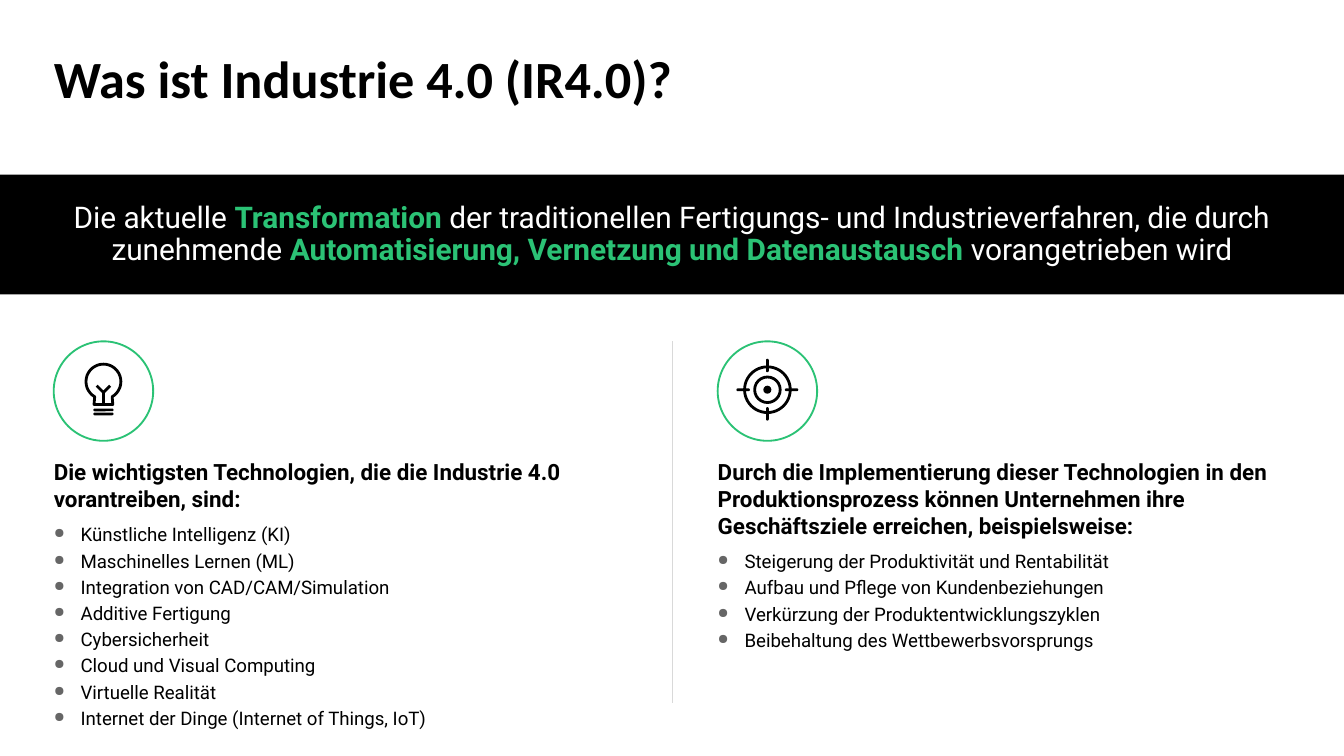
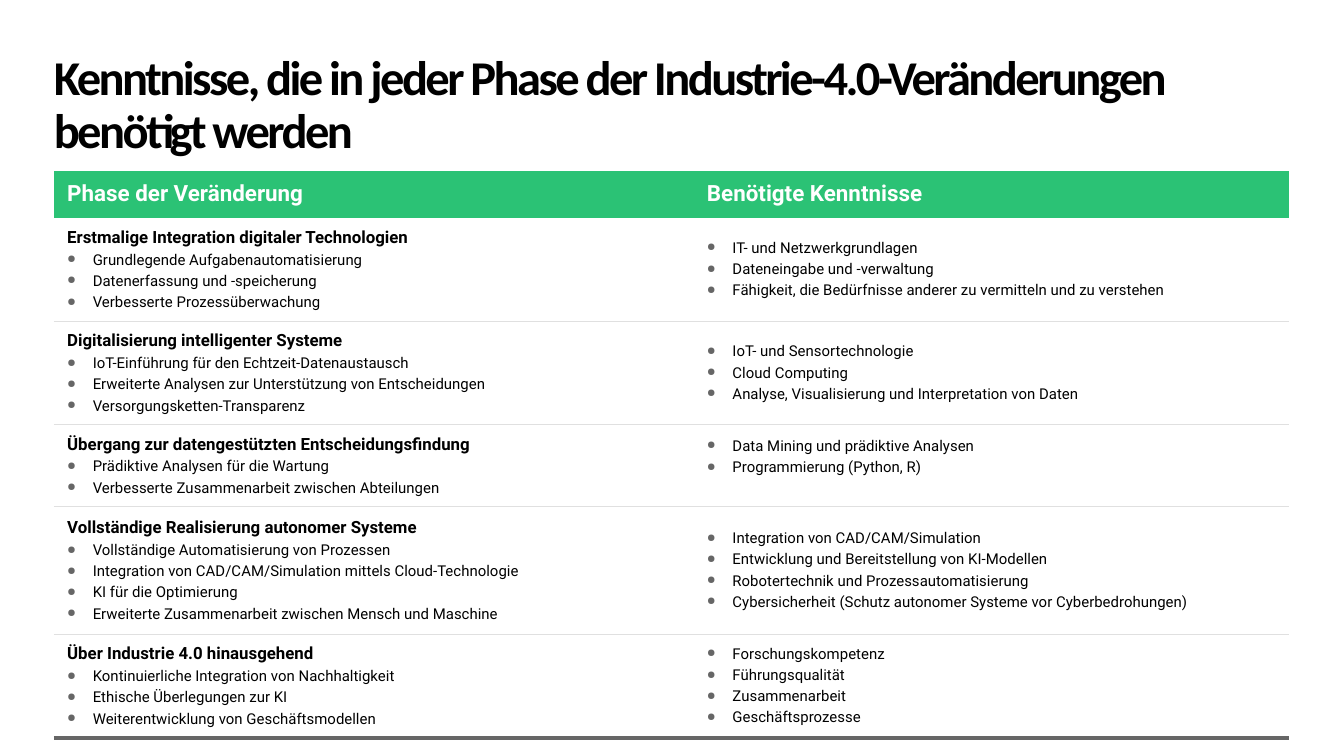
from math import cos, radians, sin

from lxml.etree import SubElement
from pptx import Presentation
from pptx.dml.color import RGBColor
from pptx.enum.shapes import MSO_CONNECTOR, MSO_SHAPE
from pptx.enum.text import MSO_ANCHOR, PP_ALIGN
from pptx.oxml import parse_xml
from pptx.oxml.ns import nsdecls, qn
from pptx.util import Inches, Pt

# Shared look
GREEN, BLACK, WHITE = "2BC275", "000000", "FFFFFF"
GRAY, RULE, PALE = "666666", "D9D9D9", "E0E0E0"
HEAD, BODY = "Calibri", "Roboto"
LEFT, WIDE = 0.4, 9.19
STROKE = 1.5

# Slide 1 wording: banner runs as (text, is key word)
BANNER = [
    ("Die aktuelle ", False),
    ("Transformation", True),
    (" der traditionellen Fertigungs- und Industrieverfahren, die durch zunehmende ", False),
    ("Automatisierung, Vernetzung und Datenaustausch", True),
    (" vorangetrieben wird", False),
]
TECH = ("Die wichtigsten Technologien, die die Industrie 4.0 vorantreiben, sind:", [
    "Künstliche Intelligenz (KI)",
    "Maschinelles Lernen (ML)",
    "Integration von CAD/CAM/Simulation",
    "Additive Fertigung",
    "Cybersicherheit",
    "Cloud und Visual Computing",
    "Virtuelle Realität",
    "Internet der Dinge (Internet of Things, IoT)",
])
GOALS = ("Durch die Implementierung dieser Technologien in den Produktionsprozess "
         "können Unternehmen ihre Geschäftsziele erreichen, beispielsweise:", [
             "Steigerung der Produktivität und Rentabilität",
             "Aufbau und Pflege von Kundenbeziehungen",
             "Verkürzung der Produktentwicklungszyklen",
             "Beibehaltung des Wettbewerbsvorsprungs",
         ])

# Slide 2 wording: height, phase, steps, skills
PHASES = [
    (0.77, "Erstmalige Integration digitaler Technologien",
     ["Grundlegende Aufgabenautomatisierung",
      "Datenerfassung und -speicherung",
      "Verbesserte Prozessüberwachung"],
     ["IT- und Netzwerkgrundlagen",
      "Dateneingabe und -verwaltung",
      "Fähigkeit, die Bedürfnisse anderer zu vermitteln und zu verstehen"]),
    (0.77, "Digitalisierung intelligenter Systeme",
     ["IoT-Einführung für den Echtzeit-Datenaustausch",
      "Erweiterte Analysen zur Unterstützung von Entscheidungen",
      "Versorgungsketten-Transparenz"],
     ["IoT- und Sensortechnologie",
      "Cloud Computing",
      "Analyse, Visualisierung und Interpretation von Daten"]),
    (0.61, "Übergang zur datengestützten Entscheidungsfindung",
     ["Prädiktive Analysen für die Wartung",
      "Verbesserte Zusammenarbeit zwischen Abteilungen"],
     ["Data Mining und prädiktive Analysen",
      "Programmierung (Python, R)"]),
    (0.95, "Vollständige Realisierung autonomer Systeme",
     ["Vollständige Automatisierung von Prozessen",
      "Integration von CAD/CAM/Simulation mittels Cloud-Technologie",
      "KI für die Optimierung",
      "Erweiterte Zusammenarbeit zwischen Mensch und Maschine"],
     ["Integration von CAD/CAM/Simulation",
      "Entwicklung und Bereitstellung von KI-Modellen",
      "Robotertechnik und Prozessautomatisierung",
      "Cybersicherheit (Schutz autonomer Systeme vor Cyberbedrohungen)"]),
    (0.77, "Über Industrie 4.0 hinausgehend",
     ["Kontinuierliche Integration von Nachhaltigkeit",
      "Ethische Überlegungen zur KI",
      "Weiterentwicklung von Geschäftsmodellen"],
     ["Forschungskompetenz",
      "Führungsqualität",
      "Zusammenarbeit",
      "Geschäftsprozesse"]),
]


def color(code):
    return RGBColor.from_string(code)


# Text
def add_run(para, text, size, code=BLACK, bold=False, face=BODY):
    run = para.add_run()
    run.text = text
    font = run.font
    font.name, font.size, font.bold = face, Pt(size), bold
    font.color.rgb = color(code)
    return run


def set_frame(frame, side=0, edge=0, anchor=MSO_ANCHOR.TOP):
    frame.word_wrap = True
    frame.margin_left = frame.margin_right = Inches(side)
    frame.margin_top = frame.margin_bottom = Inches(edge)
    frame.vertical_anchor = anchor
    return frame


def add_box(slide, x, y, w, h):
    box = slide.shapes.add_textbox(Inches(x), Inches(y), Inches(w), Inches(h))
    return set_frame(box.text_frame)


def add_title(slide, text, size, high, track=0):
    para = add_box(slide, LEFT, 0.4, WIDE, high).paragraphs[0]
    para.line_spacing = 0.9
    run = add_run(para, text, size, bold=True, face=HEAD)
    if track:
        run._r.get_or_add_rPr().set("spc", str(track))


def add_bullet(para, indent):
    props = para._p.get_or_add_pPr()
    props.set("marL", str(Inches(indent)))
    props.set("indent", str(-Inches(indent)))
    tint = SubElement(props, qn("a:buClr"))
    SubElement(tint, qn("a:srgbClr")).set("val", GRAY)
    SubElement(props, qn("a:buSzPct")).set("val", "75000")
    SubElement(props, qn("a:buChar")).set("char", "●")


def fill_list(frame, head, items, sizes, indent, before=0, after=0, gap=0):
    """Write an optional bold heading, then one bullet per item."""
    lines = ([(head, True)] if head else []) + [(item, False) for item in items]
    for num, (text, bold) in enumerate(lines):
        para = frame.add_paragraph() if num else frame.paragraphs[0]
        if not bold:
            add_bullet(para, indent)
        if num and before:
            para.space_before = Pt(before)
        if after:
            para.space_after = Pt(gap if bold else after)
        add_run(para, text, sizes[0] if bold else sizes[1], bold=bold)


# Shapes
def paint(shape, fill=None, line=None, width=1):
    shape.shadow.inherit = False
    if fill:
        shape.fill.solid()
        shape.fill.fore_color.rgb = color(fill)
    else:
        shape.fill.background()
    if line:
        shape.line.color.rgb = color(line)
        shape.line.width = Pt(width)
    else:
        shape.line.fill.background()
    return shape


def add_form(shapes, kind, x, y, w, h, fill=None, line=None, width=1):
    form = shapes.add_shape(kind, Inches(x), Inches(y), Inches(w), Inches(h))
    return paint(form, fill, line, width)


def add_disk(shapes, x, y, size, fill=None, line=None, width=1):
    """Circle around the centre x, y."""
    add_form(shapes, MSO_SHAPE.OVAL, x - size / 2, y - size / 2, size, size,
             fill, line, width)


def add_bar(shapes, x, y, w, h):
    """Rounded bar around the centre x, y."""
    bar = add_form(shapes, MSO_SHAPE.ROUNDED_RECTANGLE,
                   x - w / 2, y - h / 2, w, h, BLACK)
    bar.adjustments[0] = 0.5


def add_path(shapes, points, close=False):
    spots = [(Inches(x), Inches(y)) for x, y in points]
    pen = shapes.build_freeform(*spots[0])
    pen.add_line_segments(spots[1:], close=close)
    paint(pen.convert_to_shape(), None, BLACK, STROKE)


def add_rule(slide, x, top, end):
    rule = slide.shapes.add_connector(
        MSO_CONNECTOR.STRAIGHT, Inches(x), Inches(top), Inches(x), Inches(end))
    rule.line.color.rgb = color(RULE)
    rule.line.width = Pt(0.5)
    SubElement(rule._element.spPr, qn("a:effectLst"))


# Icons
def draw_bulb(slide, x, y):
    shapes = slide.shapes.add_group_shape().shapes
    mid = y - 0.06
    glass = [(x + 0.13 * cos(radians(deg)), mid + 0.13 * sin(radians(deg)))
             for deg in range(120, 421, 10)]
    foot = y + 0.11
    add_path(shapes, [(x - 0.07, foot), *glass, (x + 0.07, foot)], close=True)
    add_path(shapes, [(x - 0.05, y - 0.03), (x, y + 0.02), (x + 0.05, y - 0.03)])
    add_path(shapes, [(x, y + 0.02), (x, foot)])
    for drop in (0.15, 0.18):
        add_bar(shapes, x, y + drop, 0.15, 0.02)


def draw_target(slide, x, y):
    shapes = slide.shapes.add_group_shape().shapes
    add_disk(shapes, x, y, 0.06, BLACK)
    for size in (0.19, 0.34):
        add_disk(shapes, x, y, size, line=BLACK, width=STROKE)
    for sign in (-1, 1):
        add_bar(shapes, x + sign * 0.18, y, 0.1, 0.02)
        add_bar(shapes, x, y + sign * 0.18, 0.02, 0.1)


# Table
def make_edge(side, code=None, width=0.5):
    ink = (f'<a:solidFill><a:srgbClr val="{code}"/></a:solidFill>'
           if code else "<a:noFill/>")
    size = Pt(width) if code else 0
    return parse_xml(f'<a:ln{side} {nsdecls("a")} w="{size}">{ink}</a:ln{side}>')


def style_cell(cell, fill, top=None, base=None, thick=0.5):
    cell.fill.solid()
    cell.fill.fore_color.rgb = color(fill)
    cell.vertical_anchor = MSO_ANCHOR.MIDDLE
    edges = [make_edge("L"), make_edge("R"),
             make_edge("T", top), make_edge("B", base, thick)]
    props = cell._tc.get_or_add_tcPr()
    for num, edge in enumerate(edges):
        props.insert(num, edge)


def add_grid(slide):
    highs = [0.35] + [phase[0] for phase in PHASES]
    grid = slide.shapes.add_table(
        len(highs), 2, Inches(LEFT), Inches(1.27),
        Inches(WIDE), Inches(sum(highs))).table
    grid.first_row = grid.horz_banding = False
    for col, width in zip(grid.columns, (4.76, 4.43)):
        col.width = Inches(width)
    for row, high in zip(grid.rows, highs):
        row.height = Inches(high)

    for col, text in enumerate(("Phase der Veränderung", "Benötigte Kenntnisse")):
        cell = grid.cell(0, col)
        style_cell(cell, GREEN)
        add_run(cell.text_frame.paragraphs[0], text, 12, WHITE, True)

    for num, (_, head, steps, skills) in enumerate(PHASES, 1):
        last = num == len(PHASES)
        for col, (name, items) in enumerate(((head, steps), (None, skills))):
            cell = grid.cell(num, col)
            cell.margin_top = cell.margin_bottom = 0
            style_cell(cell, WHITE, PALE if num > 1 else None,
                       GRAY if last else PALE, 2.25 if last else 0.5)
            fill_list(cell.text_frame, name, items, (9, 8), 0.19, before=2)
    # The short skill list sits a little above the middle
    grid.cell(3, 1).margin_bottom = Inches(0.13)


# Slides
def add_intro(slide):
    add_title(slide, "Was ist Industrie 4.0 (IR4.0)?", 28, 0.44)
    band = add_form(slide.shapes, MSO_SHAPE.RECTANGLE, 0, 1.3, 10, 0.89, BLACK)
    frame = set_frame(band.text_frame, 0, 0.05, MSO_ANCHOR.MIDDLE)
    para = frame.paragraphs[0]
    para.alignment, para.line_spacing = PP_ALIGN.CENTER, 0.9
    for text, key in BANNER:
        add_run(para, text, 16, GREEN if key else WHITE, key)

    parts = ((LEFT, 1.82, TECH, draw_bulb), (5.34, 1.44, GOALS, draw_target))
    for x, high, (head, items), draw in parts:
        add_disk(slide.shapes, x + 0.37, 2.91, 0.74, WHITE, GREEN)
        draw(slide, x + 0.37, 2.9)
        frame = add_box(slide, x, 3.41, 4.25, high)
        fill_list(frame, head, items, (12, 10), 0.2, after=2, gap=6)
    add_rule(slide, 5, 2.54, 5.23)


def add_skills(slide):
    add_title(slide, "Kenntnisse, die in jeder Phase der Industrie-4.0-Veränderungen "
              "benötigt werden", 26, 0.79, -140)
    add_grid(slide)


def main():
    deck = Presentation()
    deck.slide_width = Inches(10)
    deck.slide_height = deck.slide_width * 9 // 16
    for build in (add_intro, add_skills):
        build(deck.slides.add_slide(deck.slide_layouts[6]))
    deck.save("out.pptx")


if __name__ == "__main__":
    main()
